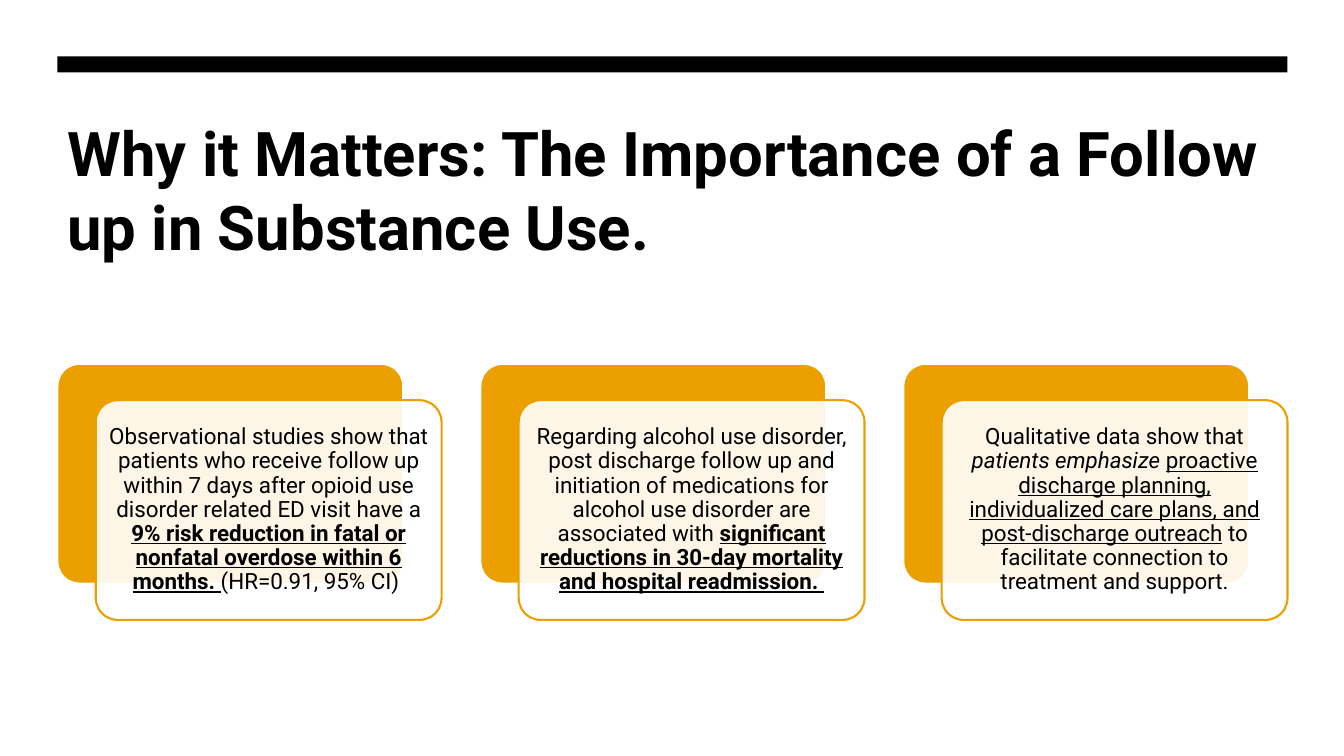
import pptx
import pptx.dml.color
import pptx.enum.shapes
import pptx.enum.text
import pptx.oxml
import pptx.oxml.ns
import pptx.util
from pptx.util import Inches

RGBColor = pptx.dml.color.RGBColor
BLACK = RGBColor(0x00, 0x00, 0x00)
WHITE = RGBColor(0xFF, 0xFF, 0xFF)
AMBER = RGBColor(0xEB, 0xA0, 0x00)

LEFT, RIGHT = 0.57, 12.77
CARD_WIDTH, CARD_HEIGHT, CARD_TOP = 3.43, 2.18, 3.61
FRONT_SHIFT_X, FRONT_SHIFT_Y = 0.38, 0.36
TEXT_MARGIN = 0.07

# Each card is a list of (text, style), where style holds any of b, i, u.
CARDS = [
    [("Observational studies show that patients who receive follow up within 7 days "
      "after opioid use disorder related ED visit have a ", ""),
     ("9% risk reduction in fatal or nonfatal overdose within 6 months. ", "bu"),
     ("(HR=0.91, 95% CI) ", "")],
    [("Regarding alcohol use disorder, post discharge follow up and initiation of "
      "medications for alcohol use disorder are associated with ", ""),
     ("significant reductions in 30-day mortality and hospital readmission. ", "bu")],
    [("Qualitative data show that ", ""),
     ("patients emphasize ", "i"),
     ("proactive discharge planning, individualized care plans, and "
      "post-discharge outreach", "u"),
     (" to facilitate connection to treatment and support.", "")],
]


class SlideBuilder:
    font_name = "Roboto"

    def __init__(self, slide):
        self.slide = slide

    def bar(self, left, top, width, height):
        shape = self.slide.shapes.add_shape(
            pptx.enum.shapes.MSO_SHAPE.RECTANGLE,
            Inches(left), Inches(top), Inches(width), Inches(height))
        shape.shadow.inherit = False
        shape.fill.solid()
        shape.fill.fore_color.rgb = BLACK
        shape.line.fill.background()

    def rounded_box(self, left, top, fill, line, opacity=100):
        shape = self.slide.shapes.add_shape(
            pptx.enum.shapes.MSO_SHAPE.ROUNDED_RECTANGLE,
            Inches(left), Inches(top), Inches(CARD_WIDTH), Inches(CARD_HEIGHT))
        shape.adjustments[0] = 0.1
        shape.shadow.inherit = False
        shape.fill.solid()
        shape.fill.fore_color.rgb = fill
        shape.line.color.rgb = line
        shape.line.width = pptx.util.Pt(1.5)
        if opacity < 100:
            color = shape.fill._xPr.find(".//" + pptx.oxml.ns.qn("a:srgbClr"))
            alpha = pptx.oxml.parse_xml(
                f'<a:alpha {pptx.oxml.ns.nsdecls("a")} val="{opacity * 1000}"/>')
            color.append(alpha)

    def text(self, left, top, width, height, runs, size, inset_x=0.1, inset_y=0.05):
        """Add a vertically centred text box and return its paragraph."""
        box = self.slide.shapes.add_textbox(
            Inches(left), Inches(top), Inches(width), Inches(height))
        frame = box.text_frame
        frame.word_wrap = True
        frame.vertical_anchor = pptx.enum.text.MSO_ANCHOR.MIDDLE
        frame.margin_left = frame.margin_right = Inches(inset_x)
        frame.margin_top = frame.margin_bottom = Inches(inset_y)
        paragraph = frame.paragraphs[0]
        paragraph.font.name = self.font_name
        paragraph.font.size = pptx.util.Pt(size)
        paragraph.font.color.rgb = BLACK
        for content, style in runs:
            run = paragraph.add_run()
            run.text = content
            run.font.bold = "b" in style
            run.font.italic = "i" in style
            run.font.underline = "u" in style
        return paragraph

    def card(self, left, runs):
        """Add an amber box, the white box over it and the card's text."""
        front_left, front_top = left + FRONT_SHIFT_X, CARD_TOP + FRONT_SHIFT_Y
        self.rounded_box(left, CARD_TOP, AMBER, WHITE)
        self.rounded_box(front_left, front_top, WHITE, AMBER, opacity=90)
        paragraph = self.text(
            front_left + TEXT_MARGIN, front_top + TEXT_MARGIN,
            CARD_WIDTH - 2 * TEXT_MARGIN, CARD_HEIGHT - 2 * TEXT_MARGIN,
            runs, 16, inset_x=0.06, inset_y=0.07)
        paragraph.alignment = pptx.enum.text.PP_ALIGN.CENTER
        paragraph.line_spacing = 0.9


def main():
    presentation = pptx.Presentation()
    presentation.slide_width = Inches(13.33)
    presentation.slide_height = Inches(7.5)
    builder = SlideBuilder(presentation.slides.add_slide(presentation.slide_layouts[6]))

    builder.bar(LEFT, 0.56, RIGHT - LEFT, 0.16)
    title = "Why it Matters: The Importance of a Follow up in Substance Use."
    builder.text(LEFT, 1.07, RIGHT - LEFT, 1.6, [(title, "b")], 44)

    card_step = (RIGHT - LEFT - CARD_WIDTH - FRONT_SHIFT_X) / (len(CARDS) - 1)
    for index, runs in enumerate(CARDS):
        builder.card(LEFT + index * card_step, runs)

    presentation.save("out.pptx")


if __name__ == "__main__":
    main()
